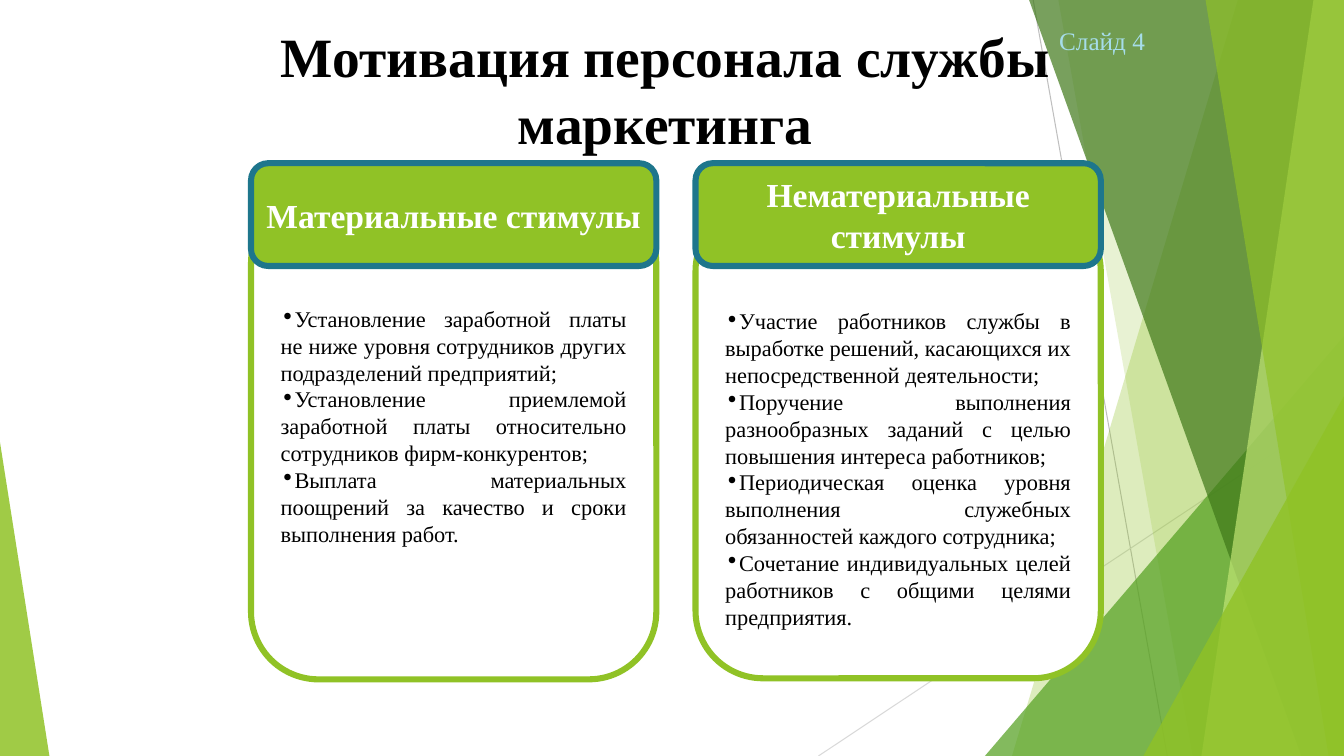
from dataclasses import dataclass

from lxml import etree
from pptx import Presentation
from pptx import util as u
from pptx.dml import color
from pptx.enum import shapes, text
from pptx.oxml import ns


@dataclass(frozen=True)
class Theme:
    font: str = "Times New Roman"
    black: str = "000000"
    white: str = "FFFFFF"
    green: str = "90C226"
    mid_green: str = "54A021"
    dark_green: str = "3F7819"
    pale_green: str = "C0E474"
    teal: str = "1E768C"
    pale_blue: str = "A6DDEA"
    line_gray: str = "BFBFBF"
    light_gray: str = "D9D9D9"
    title_size: float = 39.6
    header_size: float = 24
    label_size: float = 18
    body_size: float = 16
    border: float = 4.33
    hairline: float = 0.75


@dataclass(frozen=True)
class Ray:
    start: tuple[float, float]
    end: tuple[float, float]
    tint: str


@dataclass(frozen=True)
class Band:
    top_left: float
    bottom_left: float
    bottom_right: float
    tint: str
    opacity: int


@dataclass(frozen=True)
class Wedge:
    left: float
    top: float
    width: float
    apex: float
    tint: str
    opacity: int


@dataclass(frozen=True)
class Card:
    left: float
    top: float
    height: float
    text_inset: float
    header: str
    items: tuple[str, ...]


THEME = Theme()
WIDTH, HEIGHT = 960, 540
CARD_WIDTH = 289.5
HEADER_TOP, HEADER_HEIGHT = 116.6, 73.4

RAYS = (
    Ray((738, 0), (833.8, HEIGHT), THEME.line_gray),
    Ray((WIDTH, 290.2), (584.6, HEIGHT), THEME.light_gray),
)
DECOR = (
    Band(884.2, 722.9, WIDTH, THEME.green, 30),
    Band(756, 851.8, WIDTH, THEME.green, 20),
    Wedge(703.5, 240, 256.5, 1, THEME.mid_green, 72),
    Band(735.1, 929.5, WIDTH, THEME.dark_green, 70),
    Band(938.2, 858.2, WIDTH, THEME.pale_green, 70),
    Band(861.1, 949, WIDTH, THEME.green, 65),
    Wedge(816.7, 283, 143.3, 1, THEME.green, 80),
    Wedge(0, 316, 35.3, 0, THEME.green, 85),
)
CARDS = (
    Card(496.8, 145.4, 339.1, 60, "Нематериальные стимулы", (
        "Участие работников службы в выработке решений, касающихся их непосредственной деятельности;",
        "Поручение выполнения разнообразных заданий с целью повышения интереса работников;",
        "Периодическая оценка уровня выполнения служебных обязанностей каждого сотрудника;",
        "Сочетание индивидуальных целей работников с общими целями предприятия.",
    )),
    Card(179.3, 139.7, 345.6, 64, "Материальные стимулы", (
        "Установление заработной платы не ниже уровня сотрудников других подразделений предприятий;",
        "Установление приемлемой заработной платы относительно сотрудников фирм-конкурентов;",
        "Выплата материальных поощрений за качество и сроки выполнения работ.",
    )),
)


def rgb(tint: str) -> color.RGBColor:
    return color.RGBColor.from_string(tint)


def add_span(para, words: str, size: float, tint: str, bold: bool = False) -> None:
    span = para.add_run()
    span.text = words
    span.font.name = THEME.font
    span.font.size = u.Pt(size)
    span.font.bold = bold
    span.font.color.rgb = rgb(tint)


def add_bullet(para) -> None:
    props = para._p.get_or_add_pPr()
    props.set("marL", "0")
    props.set("indent", str(u.Pt(-8)))
    tint = etree.SubElement(props, ns.qn("a:buClr"))
    etree.SubElement(tint, ns.qn("a:srgbClr"), val=THEME.black)
    etree.SubElement(props, ns.qn("a:buChar"), char="∙")


def add_ray(page, ray: Ray) -> None:
    line = page.shapes.add_connector(
        shapes.MSO_CONNECTOR.STRAIGHT, *(u.Pt(n) for n in ray.start + ray.end))
    line.line.color.rgb = rgb(ray.tint)
    line.line.width = u.Pt(THEME.hairline)
    etree.SubElement(line.element.spPr, ns.qn("a:effectLst"))


def add_decor(page, item: Band | Wedge) -> None:
    if isinstance(item, Band):
        builder = page.shapes.build_freeform(u.Pt(item.top_left), 0)
        corners = ((WIDTH, 0), (item.bottom_right, HEIGHT), (item.bottom_left, HEIGHT))
        builder.add_line_segments([(u.Pt(x), u.Pt(y)) for x, y in corners], close=True)
        shape = builder.convert_to_shape()
    else:
        shape = page.shapes.add_shape(
            shapes.MSO_SHAPE.ISOSCELES_TRIANGLE, u.Pt(item.left), u.Pt(item.top),
            u.Pt(item.width), u.Pt(HEIGHT - item.top))
        shape.adjustments[0] = item.apex
    shape.shadow.inherit = False
    shape.line.fill.background()
    shape.fill.solid()
    shape.fill.fore_color.rgb = rgb(item.tint)
    fill = shape.element.spPr.find(".//" + ns.qn("a:srgbClr"))
    etree.SubElement(fill, ns.qn("a:alpha"), val=str(item.opacity * 1000))


def add_panel(page, left: float, top: float, height: float, fill: str, border: str):
    box = page.shapes.add_shape(
        shapes.MSO_SHAPE.ROUNDED_RECTANGLE,
        u.Pt(left), u.Pt(top), u.Pt(CARD_WIDTH), u.Pt(height))
    box.shadow.inherit = False
    box.fill.solid()
    box.fill.fore_color.rgb = rgb(fill)
    box.line.color.rgb = rgb(border)
    box.line.width = u.Pt(THEME.border)
    box.text_frame.word_wrap = True
    return box


def add_body(page, card: Card) -> None:
    box = add_panel(page, card.left, card.top, card.height, THEME.white, THEME.green)
    frame = box.text_frame
    frame.vertical_anchor = text.MSO_ANCHOR.TOP
    frame.margin_top = u.Pt(card.text_inset)
    for index, item in enumerate(card.items):
        para = frame.add_paragraph() if index else frame.paragraphs[0]
        para.alignment = text.PP_ALIGN.JUSTIFY
        add_bullet(para)
        add_span(para, item, THEME.body_size, THEME.black)


def add_header(page, card: Card) -> None:
    box = add_panel(page, card.left, HEADER_TOP, HEADER_HEIGHT, THEME.green, THEME.teal)
    box.text_frame.vertical_anchor = text.MSO_ANCHOR.MIDDLE
    para = box.text_frame.paragraphs[0]
    para.alignment = text.PP_ALIGN.CENTER
    add_span(para, card.header, THEME.header_size, THEME.white, bold=True)


def place_title(page, words: str) -> None:
    title = page.shapes.title
    title.left, title.top = u.Pt(151.2), u.Pt(-4.3)
    title.width, title.height = u.Pt(648), u.Pt(135.4)
    title.element.getparent().append(title.element)
    frame = title.text_frame
    frame.auto_size = text.MSO_AUTO_SIZE.NONE
    frame.word_wrap = True
    frame.vertical_anchor = text.MSO_ANCHOR.MIDDLE
    frame.paragraphs[0].alignment = text.PP_ALIGN.CENTER
    add_span(frame.paragraphs[0], words, THEME.title_size, THEME.black, bold=True)


def add_label(page, words: str) -> None:
    box = page.shapes.add_textbox(u.Pt(749.5), u.Pt(14.4), u.Pt(76.3), u.Pt(28.8))
    add_span(box.text_frame.paragraphs[0], words, THEME.label_size, THEME.pale_blue)


def main() -> None:
    deck = Presentation()
    deck.slide_width, deck.slide_height = u.Pt(WIDTH), u.Pt(HEIGHT)
    page = deck.slides.add_slide(deck.slide_layouts[5])
    for ray in RAYS:
        add_ray(page, ray)
    for item in DECOR:
        add_decor(page, item)
    for card in CARDS:
        add_body(page, card)
    place_title(page, "Мотивация персонала службы маркетинга")
    for card in CARDS:
        add_header(page, card)
    add_label(page, "Слайд 4")
    deck.save("out.pptx")


if __name__ == "__main__":
    main()
